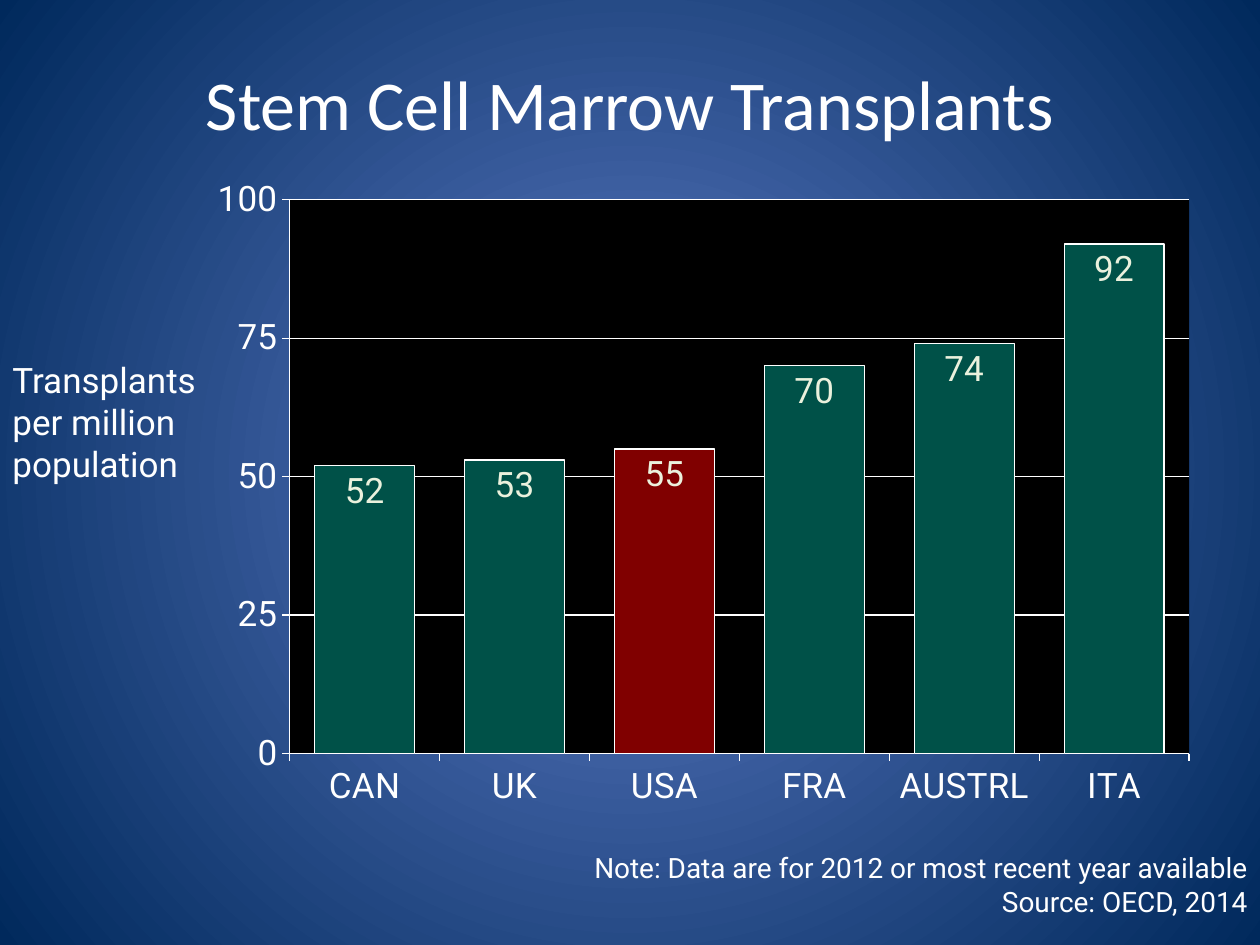
from lxml.etree import SubElement
from pptx import Presentation
from pptx.chart.data import CategoryChartData
from pptx.dml.color import RGBColor
from pptx.enum.chart import XL_CHART_TYPE, XL_LABEL_POSITION, XL_TICK_MARK
from pptx.enum.text import MSO_ANCHOR, PP_ALIGN
from pptx.oxml import parse_xml
from pptx.oxml.ns import nsdecls, qn
from pptx.util import Inches, Pt

WHITE = RGBColor(0xFF, 0xFF, 0xFF)
GLOW_BLUE = RGBColor(0x5E, 0x7C, 0xC5)
NAVY = RGBColor(0x00, 0x29, 0x5C)
BAR_GREEN = RGBColor(0x00, 0x51, 0x48)
HIGHLIGHT_RED = RGBColor(0x80, 0x00, 0x00)
LABEL_CREAM = RGBColor(0xEB, 0xF1, 0xDD)

WIDTH, HEIGHT = Inches(10), Inches(7.5)
TRANSPLANTS = {"CAN": 52, "UK": 53, "USA": 55, "FRA": 70, "AUSTRL": 74, "ITA": 92}
PLOT_SHARES = {"x": 0.091, "y": 0.051, "w": 0.89, "h": 0.846}


def place(left, top, width, height):
    """Turn shares of the slide's size into lengths."""
    return (int(left * WIDTH), int(top * HEIGHT),
            int(width * WIDTH), int(height * HEIGHT))


def style_font(font, size, color=WHITE, name="Roboto"):
    """Set size, colour and typeface of a font."""
    font.size = Pt(size)
    font.name = name
    font.bold = False
    font.color.rgb = color


def style_line(line, width=0.75):
    """Make a line white."""
    line.color.rgb = WHITE
    line.width = Pt(width)


def add_background(slide):
    """Fill the slide with a circular gradient."""
    fill = slide.background.fill
    fill.gradient()
    for stop, color in zip(fill.gradient_stops, (GLOW_BLUE, NAVY)):
        stop.color.rgb = color
    gradient = next(slide.element.iter(qn("a:gradFill")))
    gradient.replace(gradient.find(qn("a:lin")), parse_xml(
        f'<a:path {nsdecls("a")} path="circle">'
        '<a:fillToRect l="50000" t="50000" r="50000" b="50000"/></a:path>'))


def add_text(slide, text, box, size, alignment=PP_ALIGN.LEFT, name="Roboto"):
    """Add a wrapped, vertically centred text box."""
    text_frame = slide.shapes.add_textbox(*place(*box)).text_frame
    text_frame.word_wrap = True
    text_frame.vertical_anchor = MSO_ANCHOR.MIDDLE
    text_frame.text = text
    for paragraph in text_frame.paragraphs:
        paragraph.alignment = alignment
        for run in paragraph.runs:
            style_font(run.font, size, name=name)


def style_plot_area(chart):
    """Fix the inner plot area and fill it with black."""
    plot_area = next(chart.element.iter(qn("c:plotArea")))
    for layout in plot_area.findall(qn("c:layout")):
        plot_area.remove(layout)
    layout = parse_xml(f'<c:layout {nsdecls("c")}/>')
    plot_area.insert(0, layout)
    manual = SubElement(layout, qn("c:manualLayout"))
    settings = {"layoutTarget": "inner", "xMode": "edge", "yMode": "edge", **PLOT_SHARES}
    for tag, value in settings.items():
        SubElement(manual, qn(f"c:{tag}")).set("val", str(value))
    plot_area.append(parse_xml(
        f'<c:spPr {nsdecls("c", "a")}><a:solidFill><a:srgbClr val="000000"/>'
        '</a:solidFill></c:spPr>'))


def style_axes(chart):
    """Format both axes and the horizontal gridlines."""
    for axis in (chart.category_axis, chart.value_axis):
        axis.major_tick_mark = XL_TICK_MARK.OUTSIDE
        axis.minor_tick_mark = XL_TICK_MARK.NONE
        style_font(axis.tick_labels.font, 20)
        style_line(axis.format.line)
    axis = chart.value_axis
    axis.minimum_scale, axis.maximum_scale, axis.major_unit = 0, 100, 25
    axis.tick_labels.number_format = "#,##0"
    axis.tick_labels.number_format_is_linked = False
    axis.has_major_gridlines = True
    style_line(axis.major_gridlines.format.line)


def style_bars(plot):
    """Colour the bars, highlight one country and label the values."""
    plot.gap_width, plot.overlap, plot.vary_by_categories = 50, -5, False
    series = plot.series[0]
    highlight = series.points[list(TRANSPLANTS).index("USA")]
    for bar, color in ((series, BAR_GREEN), (highlight, HIGHLIGHT_RED)):
        bar.format.fill.solid()
        bar.format.fill.fore_color.rgb = color
        style_line(bar.format.line)
    labels = series.data_labels
    labels.show_value = True
    labels.position = XL_LABEL_POSITION.INSIDE_END
    labels.number_format = "#,##0"
    labels.number_format_is_linked = False
    style_font(labels.font, 20, LABEL_CREAM)


def add_transplant_chart(slide, box):
    """Add the column chart of transplants by country."""
    data = CategoryChartData()
    data.categories = list(TRANSPLANTS)
    data.add_series("Series 1", list(TRANSPLANTS.values()))
    chart = slide.shapes.add_chart(
        XL_CHART_TYPE.COLUMN_CLUSTERED, *place(*box), data).chart
    chart.has_title = False
    chart.has_legend = False
    style_font(chart.font, 18, name="Calibri")
    style_axes(chart)
    style_bars(chart.plots[0])
    style_plot_area(chart)


def main():
    """Build the slide and save it."""
    presentation = Presentation()
    presentation.slide_width, presentation.slide_height = WIDTH, HEIGHT
    slide = presentation.slides.add_slide(presentation.slide_layouts[6])
    add_background(slide)
    add_text(slide, "Note: Data are for 2012 or most recent year available\nSource: OECD, 2014",
             (0.37, 0.893, 0.63, 0.085), 16, PP_ALIGN.RIGHT)
    add_text(slide, "Stem Cell Marrow Transplants", (0, 0.025, 1, 0.167), 40,
             PP_ALIGN.CENTER, "Calibri")
    add_transplant_chart(slide, (0.157, 0.176, 0.802, 0.693))
    add_text(slide, "Transplants per million population", (0, 0.372, 0.181, 0.148), 20)
    presentation.save("out.pptx")


if __name__ == "__main__":
    main()
